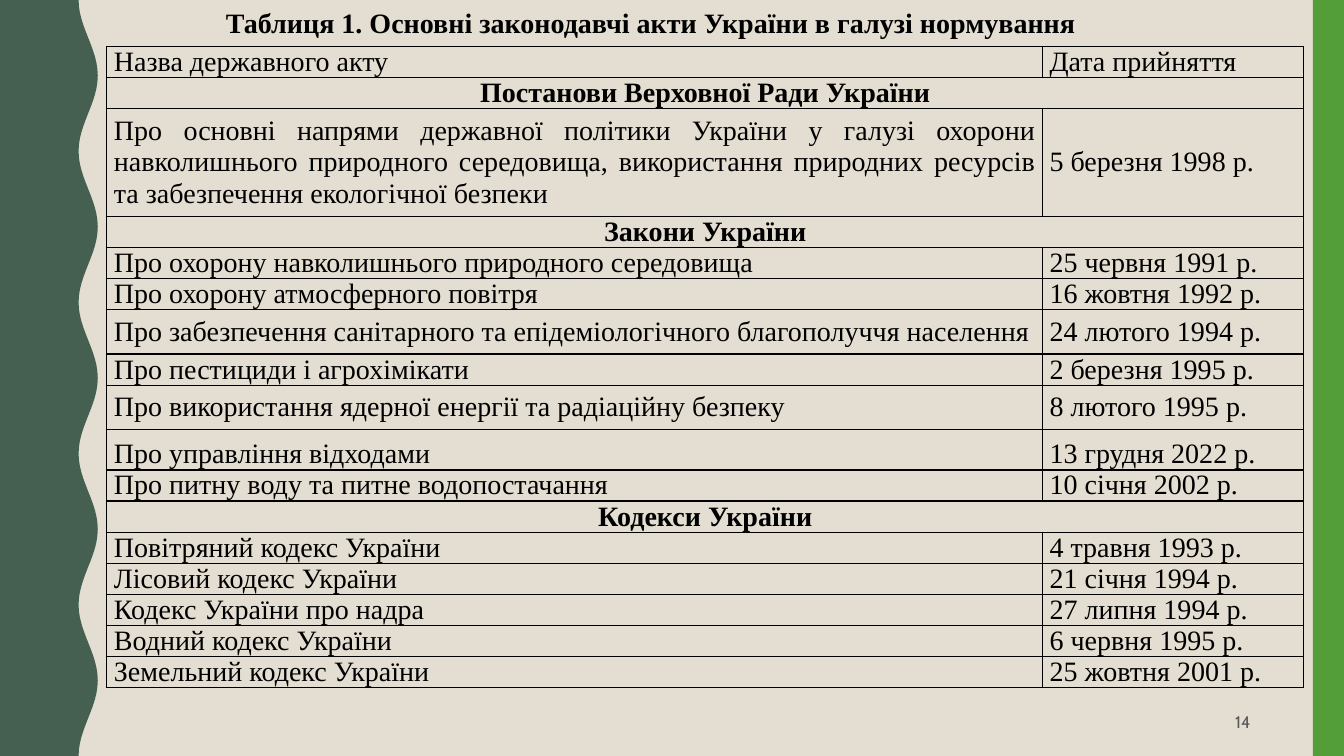
from math import cos, pi

from lxml.etree import SubElement
from pptx import Presentation
from pptx.dml.color import RGBColor
from pptx.enum.shapes import MSO_SHAPE
from pptx.enum.text import MSO_ANCHOR, PP_ALIGN
from pptx.oxml.ns import qn
from pptx.util import Inches, Pt

COLORS = {
    "background": "E3DED1",
    "wave": "455F51",
    "bar": "549E39",
    "text": "000000",
    "border": "000000",
    "number": "595959",
}
SERIF = "Times New Roman"
WIDTH, HEIGHT = 13.33, 7.5
ROW, TALL_ROW, TALLEST_ROW = 0.27, 0.44, 1.07
LEFT, CENTER, JUSTIFY = PP_ALIGN.LEFT, PP_ALIGN.CENTER, PP_ALIGN.JUSTIFY

TITLE = "Таблиця 1. Основні законодавчі акти України в галузі нормування"
HEADER = ("Назва державного акту", "Дата прийняття")
# Section heading, alignment of the act names, acts as (name, date, row height)
SECTIONS = [
    ("Постанови Верховної Ради України", JUSTIFY, [
        ("Про основні напрями державної політики України у галузі охорони "
         "навколишнього природного середовища, використання природних ресурсів "
         "та забезпечення екологічної безпеки", "5 березня 1998 р.", TALLEST_ROW),
    ]),
    ("Закони України", JUSTIFY, [
        ("Про охорону навколишнього природного середовища", "25 червня 1991 р.", ROW),
        ("Про охорону атмосферного повітря", "16 жовтня 1992 р.", ROW),
        ("Про забезпечення санітарного та епідеміологічного благополуччя населення",
         "24 лютого 1994 р.", TALL_ROW),
        ("Про пестициди і агрохімікати", "2 березня 1995 р.", ROW),
        ("Про використання ядерної енергії та радіаційну безпеку",
         "8 лютого 1995 р.", TALL_ROW),
        ("Про управління відходами", "13 грудня 2022 р.", ROW),
        ("Про питну воду та питне водопостачання", "10 січня 2002 р.", ROW),
    ]),
    ("Кодекси України", LEFT, [
        ("Повітряний кодекс України", "4 травня 1993 р.", ROW),
        ("Лісовий кодекс України", "21 січня 1994 р.", ROW),
        ("Кодекс України про надра", "27 липня 1994 р.", ROW),
        ("Водний кодекс України", "6 червня 1995 р.", ROW),
        ("Земельний кодекс України", "25 жовтня 2001 р.", ROW),
    ]),
]
LOOSE_ACT = "Про управління відходами"


def rgb(name):
    return RGBColor.from_string(COLORS[name])


def write(tf, text, align=LEFT, color="text", spacing=None, **font):
    tf.vertical_anchor = MSO_ANCHOR.MIDDLE
    p = tf.paragraphs[0]
    p.alignment = align
    if spacing:
        p.line_spacing = spacing
    r = p.add_run()
    r.text = text
    for name, value in {"name": SERIF, "size": Pt(20), "bold": False, **font}.items():
        setattr(r.font, name, value)
    r.font.color.rgb = rgb(color)


def paint(shape, color):
    shape.shadow.inherit = False
    shape.fill.solid()
    shape.fill.fore_color.rgb = rgb(color)
    shape.line.fill.background()


def add_wave(s, left, top, width, height, depth=0.19, period=1.5, steps=120):
    """Panel whose right edge is a cosine wave of the given depth."""
    def edge(y):
        return left + width - depth / 2 * (1 + cos(2 * pi * y / period))

    ys = [height * i / steps for i in range(steps + 1)]
    points = [(edge(y), top + y) for y in ys] + [(left, top + height)]
    builder = s.shapes.build_freeform(Inches(left), Inches(top))
    builder.add_line_segments([(Inches(x), Inches(y)) for x, y in points])
    paint(builder.convert_to_shape(), "wave")


def add_bar(s, *box):
    paint(s.shapes.add_shape(MSO_SHAPE.RECTANGLE, *map(Inches, box)), "bar")


def place_title(s, *box):
    sp = s.shapes.title
    sp.left, sp.top, sp.width, sp.height = map(Inches, box)
    tf = sp.text_frame
    tf.word_wrap = False
    write(tf, TITLE, CENTER, bold=True)


def format_cell(cell):
    margins = {"margin_left": 0.07, "margin_right": 0.07,
               "margin_top": 0, "margin_bottom": 0}
    for name, value in margins.items():
        setattr(cell, name, Inches(value))
    cell.vertical_anchor = MSO_ANCHOR.MIDDLE
    tcPr = cell._tc.get_or_add_tcPr()
    for side in ("lnL", "lnR", "lnT", "lnB"):
        line = SubElement(tcPr, qn(f"a:{side}"), w=str(Pt(1)))
        fill = SubElement(line, qn("a:solidFill"))
        SubElement(fill, qn("a:srgbClr"), val=COLORS["border"])
    cell.fill.background()


def add_acts_table(s, left, top, width, name_width=9.28):
    rows = [(*HEADER, ROW, LEFT)]
    for heading, align, acts in SECTIONS:
        rows.append((heading, None, ROW, CENTER))
        rows += [(*act, align) for act in acts]
    height = sum(row[2] for row in rows)
    box = map(Inches, (left, top, width, height))
    table = s.shapes.add_table(len(rows), 2, *box).table
    table.first_row = table.horz_banding = False
    table.columns[0].width = Inches(name_width)
    table.columns[1].width = Inches(width - name_width)
    for i, (name, date, row_height, align) in enumerate(rows):
        table.rows[i].height = Inches(row_height)
        name_cell, date_cell = table.cell(i, 0), table.cell(i, 1)
        for cell in (name_cell, date_cell):
            format_cell(cell)
        spacing = 1.3 if name == LOOSE_ACT else None
        write(name_cell.text_frame, name, align, spacing=spacing, bold=date is None)
        if date is None:
            name_cell.merge(date_cell)
            date_cell.text_frame.paragraphs[0].font.size = Pt(20)
        else:
            write(date_cell.text_frame, date, spacing=spacing)


def add_slide_number(s, *box):
    tf = s.shapes.add_textbox(*map(Inches, box)).text_frame
    tf.word_wrap = True
    write(tf, "14", PP_ALIGN.RIGHT, "number", name="Cabin", size=Pt(12))


def main():
    prs = Presentation()
    prs.slide_width, prs.slide_height = Inches(WIDTH), Inches(HEIGHT)
    s = prs.slides.add_slide(prs.slide_layouts.get_by_name("Title Only"))
    s.background.fill.solid()
    s.background.fill.fore_color.rgb = rgb("background")
    add_wave(s, 0, 0, 0.97, HEIGHT)
    add_bar(s, 13.02, 0, 0.31, HEIGHT)
    add_acts_table(s, 1.06, 0.46, 11.87)
    add_slide_number(s, 9.42, 6.97, 3.08, 0.38)
    place_title(s, 2.11, 0, 8.69, 0.44)
    prs.save("out.pptx")


if __name__ == "__main__":
    main()
